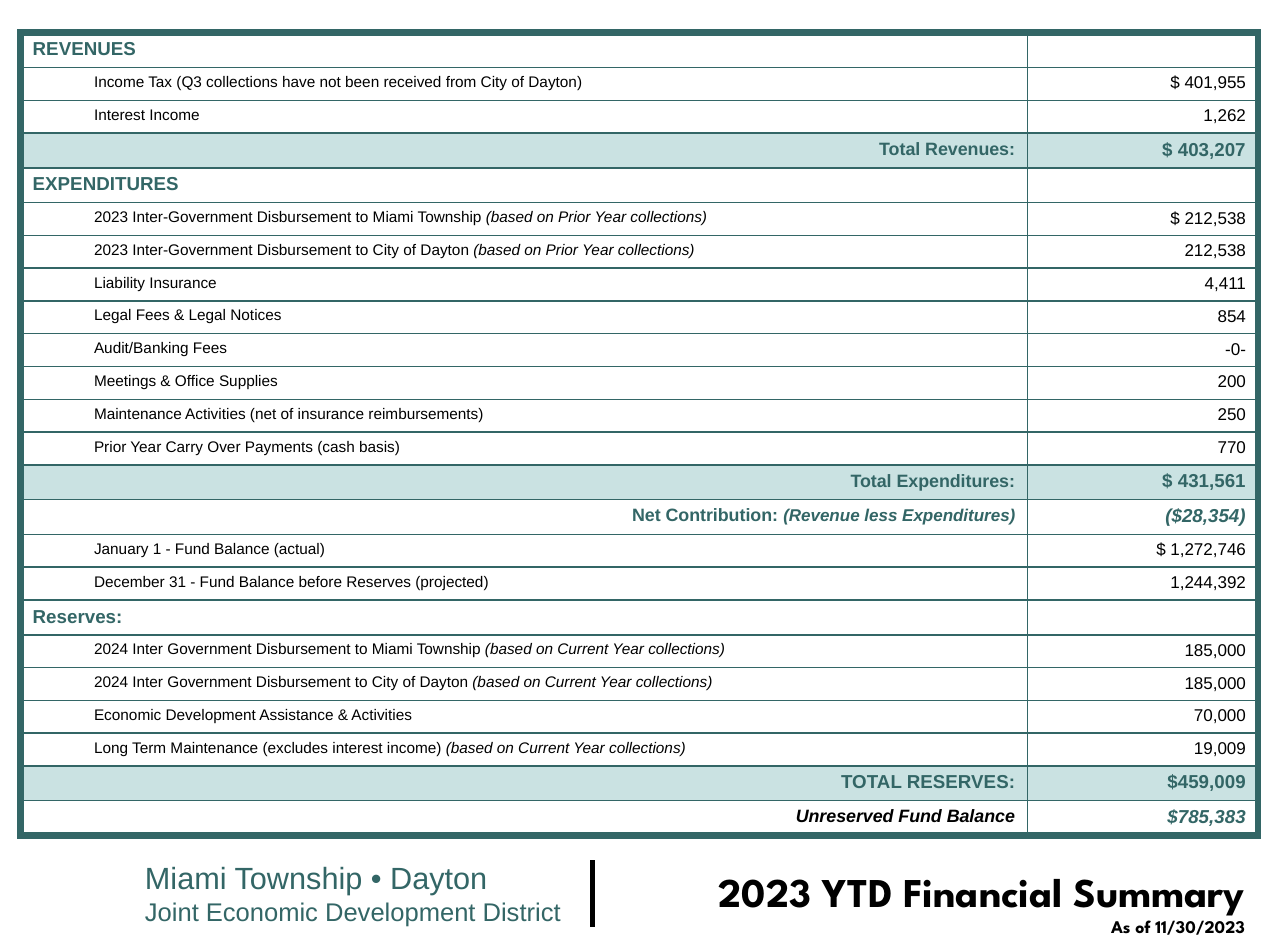
from dataclasses import dataclass
from lxml import etree
from pptx import Presentation
from pptx.dml.color import RGBColor as Rgb
from pptx.enum.shapes import MSO_CONNECTOR as Link
from pptx.enum.text import MSO_ANCHOR as Anchor, MSO_AUTO_SIZE as Fit, PP_ALIGN as Align
from pptx.oxml.ns import qn
from pptx.util import Emu, Pt

PX = 3048  # EMU per px, 300 px to the inch
PAGE = (Emu(9601200), Emu(7040563))  # 10.5 by 7.7 inches, in whole 1/576 inch
COLORS = {"teal": "336666", "mint": "CAE2E2", "white": "FFFFFF", "black": "000000"}
WIDTHS = (2463, 564)
THIN, THICK = 1, 4.5


@dataclass(frozen=True)
class Style:
    size: float
    sum_size: float
    color: str = "teal"
    sum_color: str = "teal"
    fill: str = "white"
    bold: bool = True
    italic: bool = False
    sum_italic: bool = False
    right: bool = True
    inset: int = 30
    height: int = 85


@dataclass(frozen=True)
class Row:
    style: Style
    label: str
    value: str = ""
    note: str = ""


HEAD = Style(11, 11, right=False)
ITEM = Style(9, 10, "black", "black", bold=False, right=False, inset=180, height=80)
TOTAL = Style(10.5, 11, fill="mint")
GRAND = Style(11, 11, fill="mint")
NET = Style(10.5, 11, sum_italic=True)
FREE = Style(10.5, 11, "black", italic=True, sum_italic=True)

PRIOR = "(based on Prior Year collections)"
CURRENT = "(based on Current Year collections)"
ROWS = (
    Row(HEAD, "REVENUES"),
    Row(ITEM, "Income Tax (Q3 collections have not been received from City of Dayton)", "$ 401,955"),
    Row(ITEM, "Interest Income", "1,262"),
    Row(TOTAL, "Total Revenues:", "$ 403,207"),
    Row(HEAD, "EXPENDITURES"),
    Row(ITEM, "2023 Inter-Government Disbursement to Miami Township ", "$ 212,538", PRIOR),
    Row(ITEM, "2023 Inter-Government Disbursement to City of Dayton ", "212,538", PRIOR),
    Row(ITEM, "Liability Insurance", "4,411"),
    Row(ITEM, "Legal Fees & Legal Notices", "854"),
    Row(ITEM, "Audit/Banking Fees", "-0-"),
    Row(ITEM, "Meetings & Office Supplies", "200"),
    Row(ITEM, "Maintenance Activities (net of insurance reimbursements)", "250"),
    Row(ITEM, "Prior Year Carry Over Payments (cash basis)", "770"),
    Row(TOTAL, "Total Expenditures:", "$ 431,561"),
    Row(NET, "Net Contribution: ", "($28,354)", "(Revenue less Expenditures)"),
    Row(ITEM, "January 1 - Fund Balance (actual)", "$ 1,272,746"),
    Row(ITEM, "December 31 - Fund Balance before Reserves (projected)", "1,244,392"),
    Row(HEAD, "Reserves:"),
    Row(ITEM, "2024 Inter Government Disbursement to Miami Township ", "185,000", CURRENT),
    Row(ITEM, "2024 Inter Government Disbursement to City of Dayton ", "185,000", CURRENT),
    Row(ITEM, "Economic Development Assistance & Activities", "70,000"),
    Row(ITEM, "Long Term Maintenance (excludes interest income) ", "19,009", CURRENT),
    Row(GRAND, "TOTAL RESERVES:", "$459,009"),
    Row(FREE, "Unreserved Fund Balance", "$785,383"),
)


def emu(*px: int) -> list[Emu]:
    return [Emu(n * PX) for n in px]


def rgb(name: str) -> Rgb:
    return Rgb.from_string(COLORS[name])


def set_font(para, size: float, color: str, bold: bool = False,
             italic: bool = False, face: str = "Arial") -> None:
    font = para.font
    font.name, font.size, font.bold, font.italic = face, Pt(size), bold, italic
    font.color.rgb = rgb(color)


def add_edges(cell, row: int, col: int) -> None:
    """Give the cell thick lines on the table's rim and thin ones inside."""
    rims = {"L": col == 0, "R": col == len(WIDTHS) - 1,
            "T": row == 0, "B": row == len(ROWS) - 1}
    props = cell._tc.get_or_add_tcPr()
    for side, rim in rims.items():
        line = etree.SubElement(props, qn(f"a:ln{side}"), w=str(Pt(THICK if rim else THIN)))
        fill = etree.SubElement(line, qn("a:solidFill"))
        etree.SubElement(fill, qn("a:srgbClr"), val=COLORS["teal"])


def fill_row(table, at: int, row: Row) -> None:
    style = row.style
    table.rows[at].height = Emu(style.height * PX)
    label, value = table.cell(at, 0), table.cell(at, 1)
    for col, cell in enumerate((label, value)):
        add_edges(cell, at, col)
        cell.fill.solid()
        cell.fill.fore_color.rgb = rgb(style.fill)
    label.margin_left = Emu(style.inset * PX)

    para = label.text_frame.paragraphs[0]
    para.alignment = Align.RIGHT if style.right else Align.LEFT
    set_font(para, style.size, style.color, style.bold, style.italic)
    para.add_run().text = row.label
    if row.note:
        note = para.add_run()
        note.text = row.note
        note.font.italic = True
        note.font.size = Pt(min(style.size, 10))

    para = value.text_frame.paragraphs[0]
    para.alignment = Align.RIGHT
    set_font(para, style.sum_size, style.sum_color, style.bold, style.sum_italic)
    if row.value:
        para.add_run().text = row.value
    else:
        etree.SubElement(para._p, qn("a:endParaRPr"), sz=str(style.sum_size * 100))


def add_budget(slide) -> None:
    high = sum(row.style.height for row in ROWS)
    frame = slide.shapes.add_table(len(ROWS), len(WIDTHS), *emu(50, 80, sum(WIDTHS), high))
    table = frame.table
    table.first_row = table.horz_banding = False
    for col, width in zip(table.columns, WIDTHS):
        col.width = Emu(width * PX)
    for at, row in enumerate(ROWS):
        fill_row(table, at, row)


def add_title(slide) -> None:
    title = slide.shapes.title
    title.left, title.top, title.width, title.height = emu(1626, 2105, 1449, 203)
    frame = title.text_frame
    frame.text = "2023 YTD Financial Summary\nAs of 11/30/2023"
    frame.word_wrap, frame.auto_size = False, Fit.NONE
    frame.vertical_anchor = Anchor.BOTTOM
    for para, size in zip(frame.paragraphs, (24, 10.5)):
        para.alignment = Align.RIGHT
        set_font(para, size, "black", True, face="League Spartan")


def add_owner(slide) -> None:
    box = slide.shapes.add_textbox(*emu(325, 2087, 1200, 201))
    frame = box.text_frame
    frame.word_wrap = True
    frame.text = "Miami Township • Dayton\nJoint Economic Development District"
    for para, size in zip(frame.paragraphs, (18, 15)):
        set_font(para, size, "teal")


def add_bar(slide) -> None:
    bar = slide.shapes.add_connector(Link.STRAIGHT, *emu(1449, 2268, 1449, 2105))
    bar.line.color.rgb = rgb("black")
    bar.line.width = Pt(3)
    etree.SubElement(bar._element.spPr, qn("a:effectLst"))


def main() -> None:
    deck = Presentation()
    deck.slide_width, deck.slide_height = PAGE
    slide = deck.slides.add_slide(deck.slide_layouts[5])
    add_bar(slide)
    add_owner(slide)
    add_title(slide)
    add_budget(slide)
    deck.save("out.pptx")


if __name__ == "__main__":
    main()
